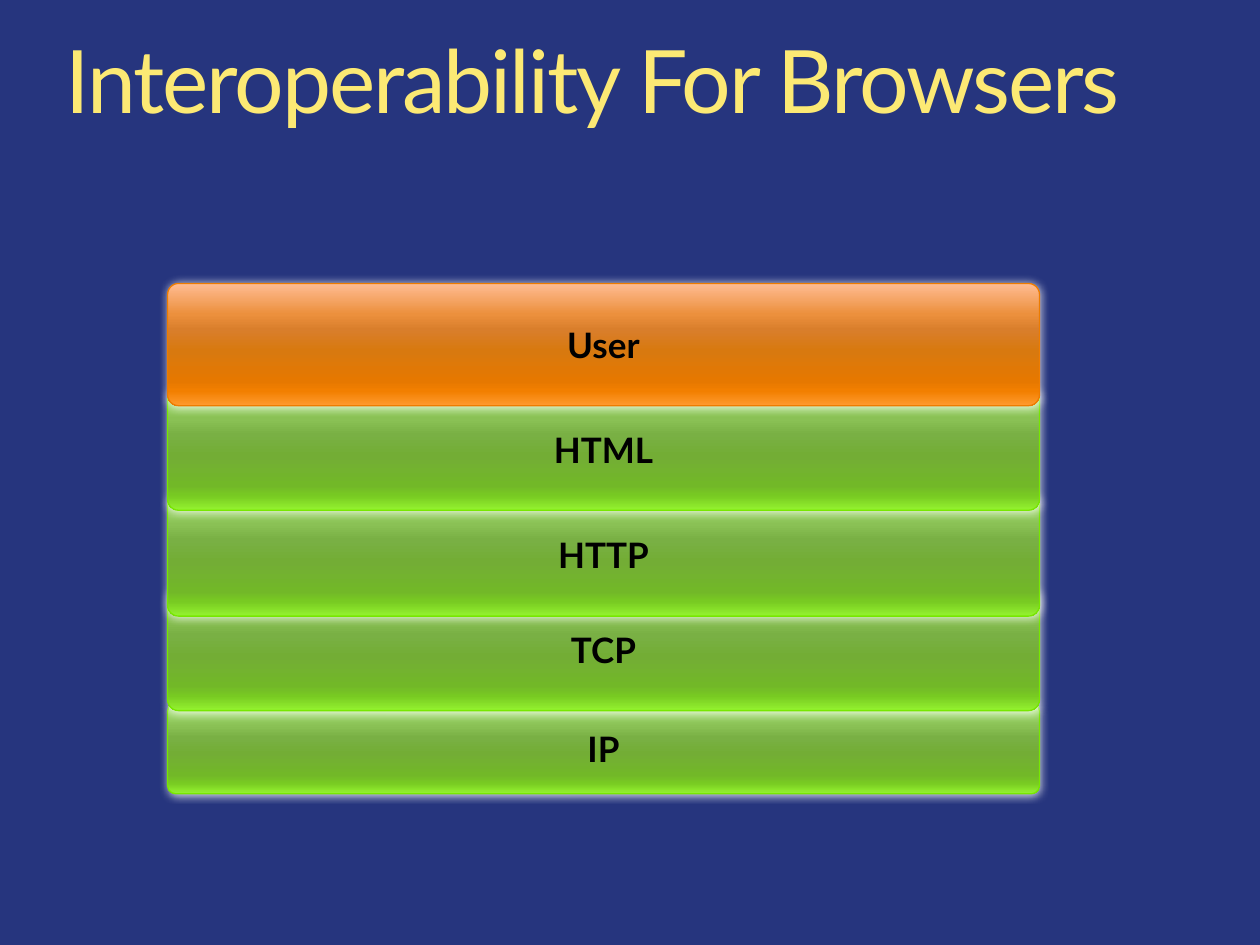
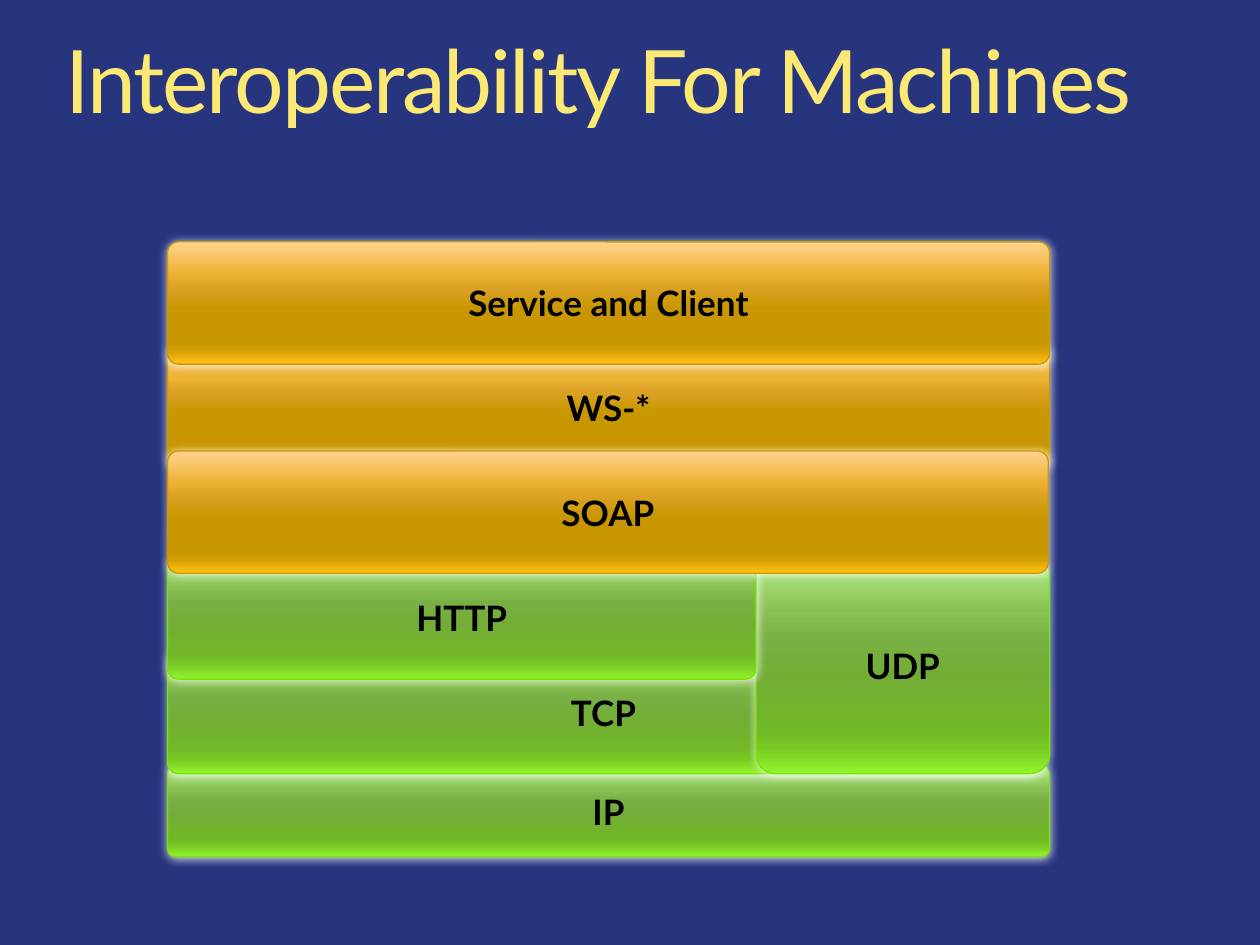
from lxml import etree
from pptx import Presentation
from pptx.dml.color import RGBColor
from pptx.enum.shapes import MSO_SHAPE
from pptx.enum.text import MSO_ANCHOR, MSO_AUTO_SIZE, PP_ALIGN
from pptx.oxml.ns import qn
from pptx.util import Inches, Pt

ROUNDED = MSO_SHAPE.ROUNDED_RECTANGLE
TOP, MIDDLE = MSO_ANCHOR.TOP, MSO_ANCHOR.MIDDLE
LEFT, CENTER = PP_ALIGN.LEFT, PP_ALIGN.CENTER
NO_AUTOFIT = MSO_AUTO_SIZE.NONE
TITLE_ONLY = 5

FONT = "Lato"
BACKGROUND = "26357E"
BLACK = "000000"
GLOW = "FFFFFF"
TITLE_STOPS = [(28, "FEF9DA"), (52, "FCE974"), (68, "F79A1D")]
BAND_POSITIONS = (0, 25, 38, 55, 80, 88, 100)
GREEN = ("77E700", "B6EF8B 8AC155 79B044 73AD35 72B828 78CA22 94F32F")
ORANGE = ("ED7C00", "FFBC93 EC903D D97E2B D8790F E67800 F27F00 FF9A2E")
GOLD = ("CC9A00", "FFD390 ECB335 DAA123 C89600 C69500 D19D00 FFC018")

STACK_LEFT = 1.33
BAND_HEIGHT = 0.97
BASE_HEIGHT = 0.72


def color(value):
    return RGBColor.from_string(value)


def add_color(parent, value):
    return etree.SubElement(parent, qn("a:srgbClr"), val=value)


def paint_gradient(fill, holder, stops):
    fill.gradient()
    fill.gradient_angle = 270
    stop_list = holder.find(qn("a:gradFill")).find(qn("a:gsLst"))
    for stop in list(stop_list):
        stop_list.remove(stop)
    for position, value in stops:
        stop = etree.SubElement(stop_list, qn("a:gs"), pos=str(position * 1000))
        add_color(stop, value)


class StackDeck:
    def __init__(self):
        self.deck = Presentation()
        self.deck.slide_width = Inches(10)
        self.deck.slide_height = Inches(7.5)
        background = self.deck.slide_master.background.fill
        background.solid()
        background.fore_color.rgb = color(BACKGROUND)
        self.page = None

    def add_page(self, title):
        self.page = self.deck.slides.add_slide(self.deck.slide_layouts[TITLE_ONLY])
        box = self.page.shapes.title
        box.left, box.top = Inches(0.42), Inches(0.25)
        box.width, box.height = Inches(9.16), Inches(0.76)
        frame = box.text_frame
        frame.auto_size = NO_AUTOFIT
        span = self.add_text(frame, title, 50, LEFT, TOP)
        frame.paragraphs[0].line_spacing = 0.9
        properties = span.font._element
        properties.set("spc", "-120")
        paint_gradient(span.font.fill, properties, TITLE_STOPS)

    def add_text(self, frame, text, size, alignment, anchor):
        frame.word_wrap = True
        frame.vertical_anchor = anchor
        frame.margin_left = frame.margin_right = Inches(0.1)
        frame.margin_top = frame.margin_bottom = Inches(0.05)
        para = frame.paragraphs[0]
        para.alignment = alignment
        span = para.add_run()
        span.text = text
        span.font.name = FONT
        span.font.size = Pt(size)
        return span

    def add_band(self, label, scheme, top, width, height=BAND_HEIGHT, left=STACK_LEFT):
        outline, shades = scheme
        box = self.page.shapes.add_shape(
            ROUNDED, Inches(left), Inches(top), Inches(width), Inches(height))
        box.adjustments[0] = 0.09
        properties = box._element.spPr
        paint_gradient(box.fill, properties, zip(BAND_POSITIONS, shades.split()))
        box.line.color.rgb = color(outline)
        box.line.width = Pt(0.75)
        self.add_glow(box)
        span = self.add_text(box.text_frame, label, 20, CENTER, MIDDLE)
        span.font.bold = True
        span.font.color.rgb = color(BLACK)

    def add_glow(self, box):
        box.shadow.inherit = False
        effects = box._element.spPr.find(qn("a:effectLst"))
        glow = etree.SubElement(
            effects, qn("a:outerShdw"), blurRad=str(Inches(0.07)), dist="0",
            dir="0", algn="ctr", rotWithShape="0")
        shade = add_color(glow, GLOW)
        etree.SubElement(shade, qn("a:alpha"), val="80000")


def main():
    stack = StackDeck()

    stack.add_page("Interoperability For Browsers")
    stack.add_band("IP", GREEN, 5.58, 6.92, BASE_HEIGHT)
    for label, scheme, top in [
        ("TCP", GREEN, 4.67),
        ("HTTP", GREEN, 3.92),
        ("HTML", GREEN, 3.08),
        ("User", ORANGE, 2.25),
    ]:
        stack.add_band(label, scheme, top, 6.92)

    stack.add_page("Interoperability For Machines")
    stack.add_band("IP", GREEN, 6.08, 7, BASE_HEIGHT)
    stack.add_band("TCP", GREEN, 5.17, 6.92)
    stack.add_band("UDP", GREEN, 4.42, 2.33, height=1.72, left=6)
    stack.add_band("HTTP", GREEN, 4.42, 4.67)
    for label, top, width in [
        ("WS-*", 2.75, 7),
        ("SOAP", 3.58, 6.99),
        ("Service and Client", 1.92, 7),
    ]:
        stack.add_band(label, GOLD, top, width)

    stack.deck.save("out.pptx")


if __name__ == "__main__":
    main()
